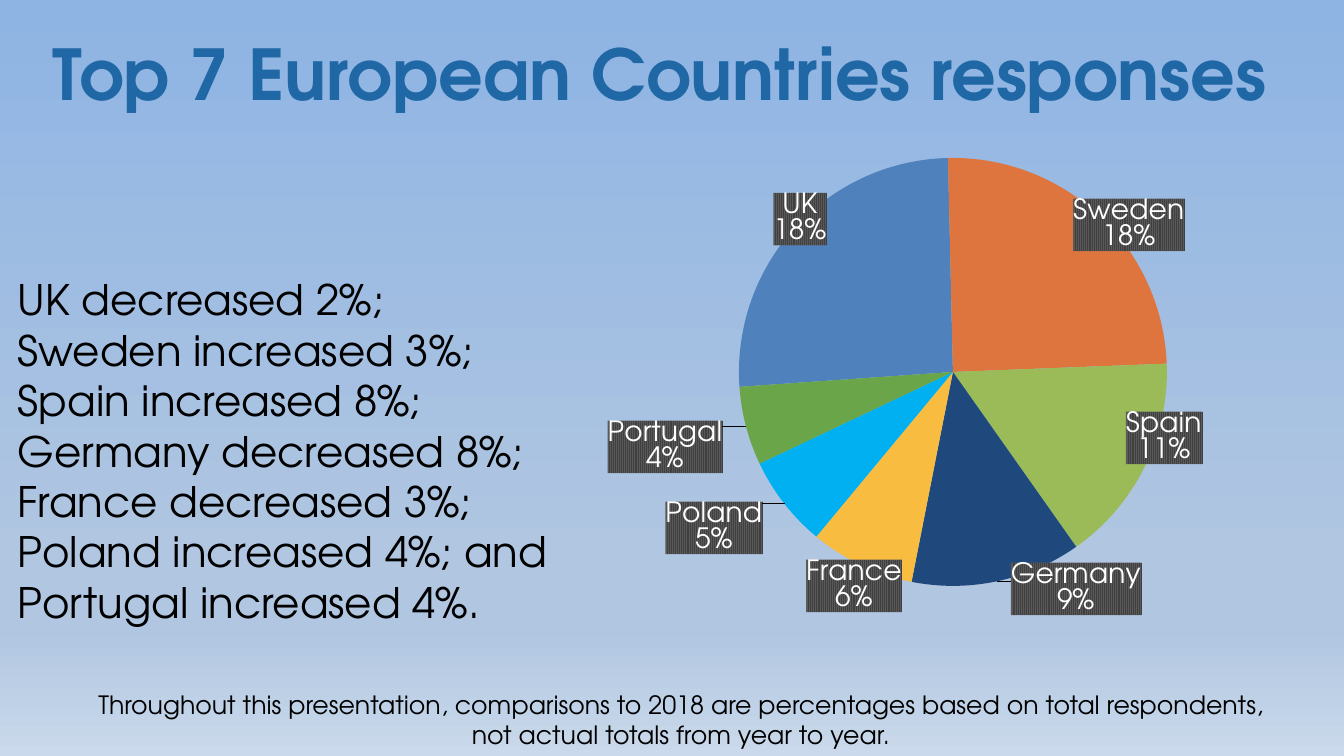
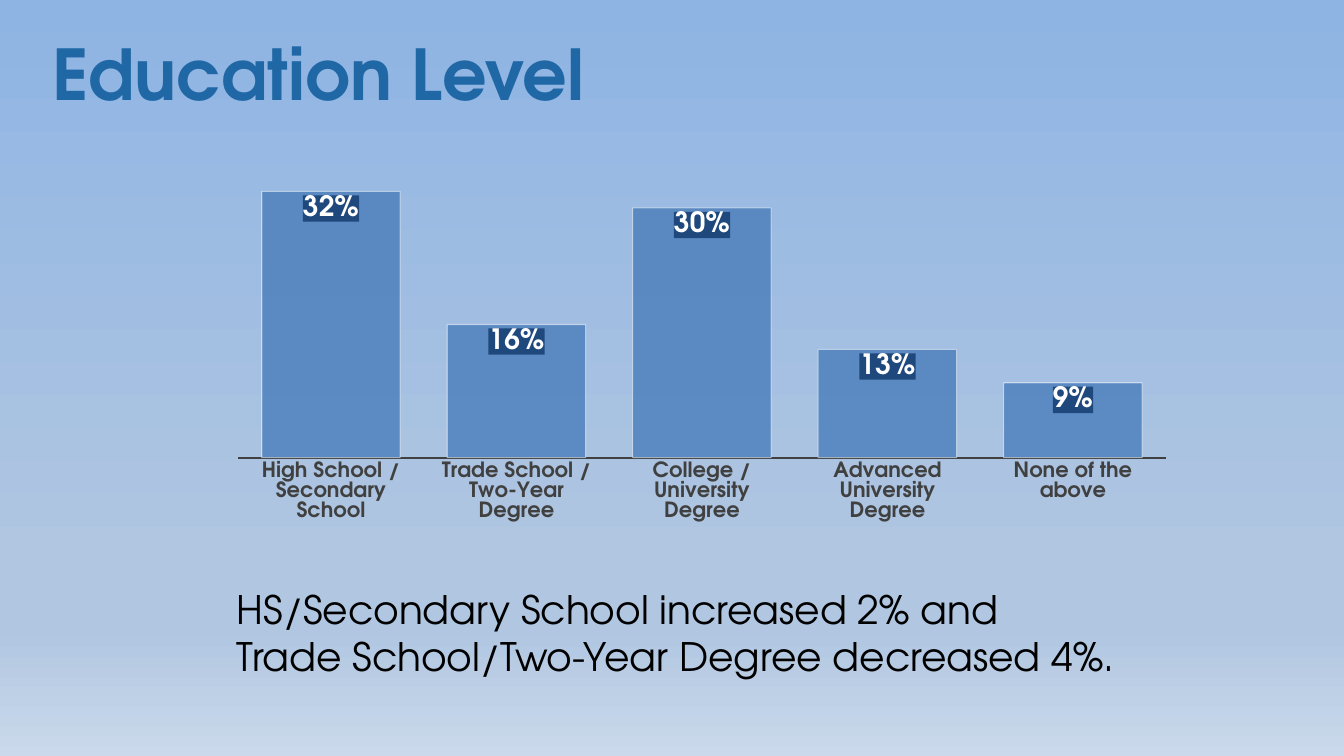
from math import cos, radians, sin

from pptx import Presentation
from pptx.chart.data import CategoryChartData
from pptx.dml.color import RGBColor
from pptx.enum.chart import XL_CHART_TYPE, XL_LABEL_POSITION, XL_TICK_MARK
from pptx.enum.text import MSO_ANCHOR, MSO_AUTO_SIZE, PP_ALIGN
from pptx.oxml import parse_xml
from pptx.oxml.ns import nsdecls
from pptx.util import Emu, Pt

SLIDE_W, SLIDE_H = 1344, 756
EMU_PER_PX = 12192000 / SLIDE_W

FONT = "TeX Gyre Adventor"
TITLE_BLUE = RGBColor(0x20, 0x67, 0xA5)
BAR_BLUE = RGBColor(0x4F, 0x81, 0xBD)
NAVY = RGBColor(0x1F, 0x49, 0x7D)
ORANGE = RGBColor(0xDF, 0x75, 0x3E)
LIME = RGBColor(0x9B, 0xBB, 0x59)
AMBER = RGBColor(0xF8, 0xBD, 0x40)
SKY = RGBColor(0x00, 0xB0, 0xF0)
GREEN = RGBColor(0x6B, 0xA5, 0x49)
DARK_GREY = RGBColor(0x40, 0x40, 0x40)
MID_GREY = RGBColor(0x59, 0x59, 0x59)
BLACK = RGBColor(0, 0, 0)
WHITE = RGBColor(0xFF, 0xFF, 0xFF)
SKY_TOP = RGBColor(0x8E, 0xB4, 0xE3)
SKY_MIDDLE = RGBColor(0xB0, 0xC6, 0xE1)
SKY_BOTTOM = RGBColor(0xCA, 0xD9, 0xEB)
BACKGROUND_STOPS = [(0, SKY_TOP), (74, SKY_MIDDLE), (83, SKY_MIDDLE), (100, SKY_BOTTOM)]

TITLE_BOX = (42, 25, 1252, 126)

COUNTRIES_TITLE = "Top 7 European Countries responses"
# category, slice value, colour, label name, label share, label centre
COUNTRIES = [
    ("United Kingdom", 26, BAR_BLUE, "UK", "18%", (800, 219)),
    ("Sweden", 25, ORANGE, "Sweden", "18%", (1129, 225)),
    ("Spain", 16, LIME, "Spain", "11%", (1164, 438)),
    ("Germany", 13, NAVY, "Germany", "9%", (1076, 589)),
    ("France", 8, AMBER, "France", "6%", (854, 586)),
    ("Poland", 7, SKY, "Poland", "5%", (714, 528)),
    ("Portugal", 6, GREEN, "Portugal", "4%", (665, 447)),
]
COUNTRY_CHANGES = [
    "UK decreased 2%;",
    "Sweden increased 3%;",
    "Spain increased 8%;",
    "Germany decreased 8%;",
    "France decreased 3%;",
    "Poland increased 4%; and",
    "Portugal increased 4%.",
]
COMPARISON_NOTE = [
    "Throughout this presentation, comparisons to 2018 are percentages "
    "based on total respondents, not actual totals from year to year."
]
COUNTRIES_CHART_BOX = (597, 101, 655, 571)
PIE_CENTRE = (953, 372)
PIE_RADIUS = 214
PIE_START = 266

EDUCATION_TITLE = "Education Level"
EDUCATION = [
    ("High School / Secondary School", 0.32),
    ("Trade School / Two-Year Degree", 0.16),
    ("College / University Degree", 0.30),
    ("Advanced University Degree", 0.13),
    ("None of the above", 0.09),
]
EDUCATION_CHANGES = [
    "HS/Secondary School increased 2% and",
    "Trade School/Two-Year Degree decreased 4%.",
]
EDUCATION_CHART_BOX = (219, 159, 966, 370)


def px(*lengths):
    return [Emu(round(length * EMU_PER_PX)) for length in lengths]


def style_font(font, size, color, bold=False):
    font.name, font.size, font.bold = FONT, Pt(size), bold
    font.color.rgb = color


def paint_background(master):
    fill = master.background.fill
    fill.gradient()
    fill.gradient_angle = 270
    stop_list = master.element.find(".//{*}bg//{*}gsLst")
    for stop in list(stop_list):
        stop_list.remove(stop)
    for percent, color in BACKGROUND_STOPS:
        stop_list.append(parse_xml(
            f'<a:gs {nsdecls("a")} pos="{percent * 1000}"><a:srgbClr val="{color}"/></a:gs>'))


def add_titled_slide(prs, heading):
    slide = prs.slides.add_slide(prs.slide_layouts[5])
    title = slide.shapes.title
    title.left, title.top, title.width, title.height = px(*TITLE_BOX)
    frame = title.text_frame
    frame.text = heading
    frame.word_wrap = True
    frame.auto_size = MSO_AUTO_SIZE.NONE
    frame.vertical_anchor = MSO_ANCHOR.TOP
    frame.margin_top = 0
    paragraph = frame.paragraphs[0]
    paragraph.alignment = PP_ALIGN.LEFT
    paragraph.line_spacing = 1.07
    style_font(paragraph.font, 50, TITLE_BLUE, bold=True)
    return slide


def add_text(slide, box, lines, size, align=PP_ALIGN.LEFT):
    frame = slide.shapes.add_textbox(*px(*box)).text_frame
    frame.word_wrap = True
    for i, line in enumerate(lines):
        paragraph = frame.add_paragraph() if i else frame.paragraphs[0]
        paragraph.text = line
        paragraph.alignment = align
        style_font(paragraph.font, size, BLACK)


def add_chart(slide, kind, box, names, values, number_format):
    data = CategoryChartData(number_format=number_format)
    data.categories = names
    data.add_series("Series 1", values)
    chart = slide.shapes.add_chart(kind, *px(*box), data).chart
    chart.has_legend = False
    chart.has_title = False
    style_font(chart.font, 10, BLACK)
    return chart


def manual_layout(x, y, size=None):
    """Layout element in fractions of the chart; a size makes it an inner plot area."""
    inner = edges = extent = ""
    if size:
        inner = '<c:layoutTarget val="inner"/>'
        edges = '<c:xMode val="edge"/><c:yMode val="edge"/>'
        extent = f'<c:w val="{size[0]:.4f}"/><c:h val="{size[1]:.4f}"/>'
    return parse_xml(
        f'<c:layout {nsdecls("c")}><c:manualLayout>{inner}{edges}'
        f'<c:x val="{x:.4f}"/><c:y val="{y:.4f}"/>{extent}</c:manualLayout></c:layout>')


def label_box(fill_xml):
    return parse_xml(f'<c:spPr {nsdecls("c", "a")}>{fill_xml}<a:ln><a:noFill/></a:ln></c:spPr>')


def set_alpha(fill_parent, percent):
    color = fill_parent.find("{*}solidFill/{*}srgbClr")
    color.append(parse_xml(f'<a:alpha {nsdecls("a")} val="{percent * 1000}"/>'))


def add_countries_pie(slide):
    names, values, colors, *_ = zip(*COUNTRIES)
    chart = add_chart(slide, XL_CHART_TYPE.PIE, COUNTRIES_CHART_BOX, names, values, "General")
    left, top, width, height = COUNTRIES_CHART_BOX
    centre_x, centre_y = PIE_CENTRE

    plot_area = chart._chartSpace.find(".//{*}plotArea")
    for layout in plot_area.findall("{*}layout"):
        plot_area.remove(layout)
    plot_area.insert(0, manual_layout(
        (centre_x - PIE_RADIUS - left) / width, (centre_y - PIE_RADIUS - top) / height,
        (2 * PIE_RADIUS / width, 2 * PIE_RADIUS / height)))
    plot_area.find("{*}pieChart").append(
        parse_xml(f'<c:firstSliceAng {nsdecls("c")} val="{PIE_START}"/>'))

    pattern = (f'<a:pattFill prst="narVert"><a:fgClr><a:srgbClr val="{DARK_GREY}"/></a:fgClr>'
               f'<a:bgClr><a:srgbClr val="{MID_GREY}"/></a:bgClr></a:pattFill>')
    series = chart.plots[0].series[0]
    degrees_per_unit = 360 / sum(values)
    angle = PIE_START
    for i, (_, value, color, name, share, label_centre) in enumerate(COUNTRIES):
        point = series.points[i]
        point.format.fill.solid()
        point.format.fill.fore_color.rgb = color
        point.format.line.fill.background()

        label = point.data_label
        label.text_frame.text = f"{name}\n{share}"
        for paragraph in label.text_frame.paragraphs:
            style_font(paragraph.runs[0].font, 20, WHITE)
        label.position = XL_LABEL_POSITION.CENTER

        # A label is moved from its default place, halfway along the slice's middle.
        middle = radians(angle + value * degrees_per_unit / 2)
        default_x = centre_x + PIE_RADIUS / 2 * sin(middle)
        default_y = centre_y - PIE_RADIUS / 2 * cos(middle)
        label_text = series._element.findall(".//{*}dLbl")[i].find("{*}tx")
        label_text.addprevious(manual_layout(
            (label_centre[0] - default_x) / width, (label_centre[1] - default_y) / height))
        label_text.addnext(label_box(pattern))
        angle += value * degrees_per_unit


def add_education_columns(slide):
    names, values = zip(*EDUCATION)
    chart = add_chart(slide, XL_CHART_TYPE.COLUMN_CLUSTERED, EDUCATION_CHART_BOX,
                      names, values, "0%")
    value_axis = chart.value_axis
    value_axis.visible = False
    value_axis.has_major_gridlines = False
    value_axis.minimum_scale, value_axis.maximum_scale = 0, 0.35

    category_axis = chart.category_axis
    category_axis.major_tick_mark = XL_TICK_MARK.NONE
    category_axis.format.line.color.rgb = DARK_GREY
    category_axis.format.line.width = Pt(1.5)
    style_font(category_axis.tick_labels.font, 15, DARK_GREY, bold=True)

    plot = chart.plots[0]
    plot.gap_width = 34
    plot.vary_by_categories = False
    series = plot.series[0]
    series.format.fill.solid()
    series.format.fill.fore_color.rgb = BAR_BLUE
    series.format.line.color.rgb = WHITE
    series.format.line.width = Pt(0.75)
    bar_style = series._element.find("{*}spPr")
    set_alpha(bar_style, 85)
    set_alpha(bar_style.find("{*}ln"), 50)

    labels = series.data_labels
    labels.show_value = True
    labels.number_format, labels.number_format_is_linked = "0%", False
    labels.position = XL_LABEL_POSITION.INSIDE_END
    style_font(labels.font, 20, WHITE, bold=True)
    series._element.find("{*}dLbls/{*}txPr").addprevious(
        label_box(f'<a:solidFill><a:srgbClr val="{NAVY}"/></a:solidFill>'))


def main():
    prs = Presentation()
    prs.slide_width, prs.slide_height = px(SLIDE_W, SLIDE_H)
    paint_background(prs.slide_master)

    countries = add_titled_slide(prs, COUNTRIES_TITLE)
    add_countries_pie(countries)
    add_text(countries, (8, 269, 613, 367), COUNTRY_CHANGES, 30)
    add_text(countries, (76, 684, 1210, 72), COMPARISON_NOTE, 18, PP_ALIGN.CENTER)

    education = add_titled_slide(prs, EDUCATION_TITLE)
    add_text(education, (227, 580, 932, 105), EDUCATION_CHANGES, 28)
    add_education_columns(education)

    prs.save("out.pptx")


if __name__ == "__main__":
    main()
